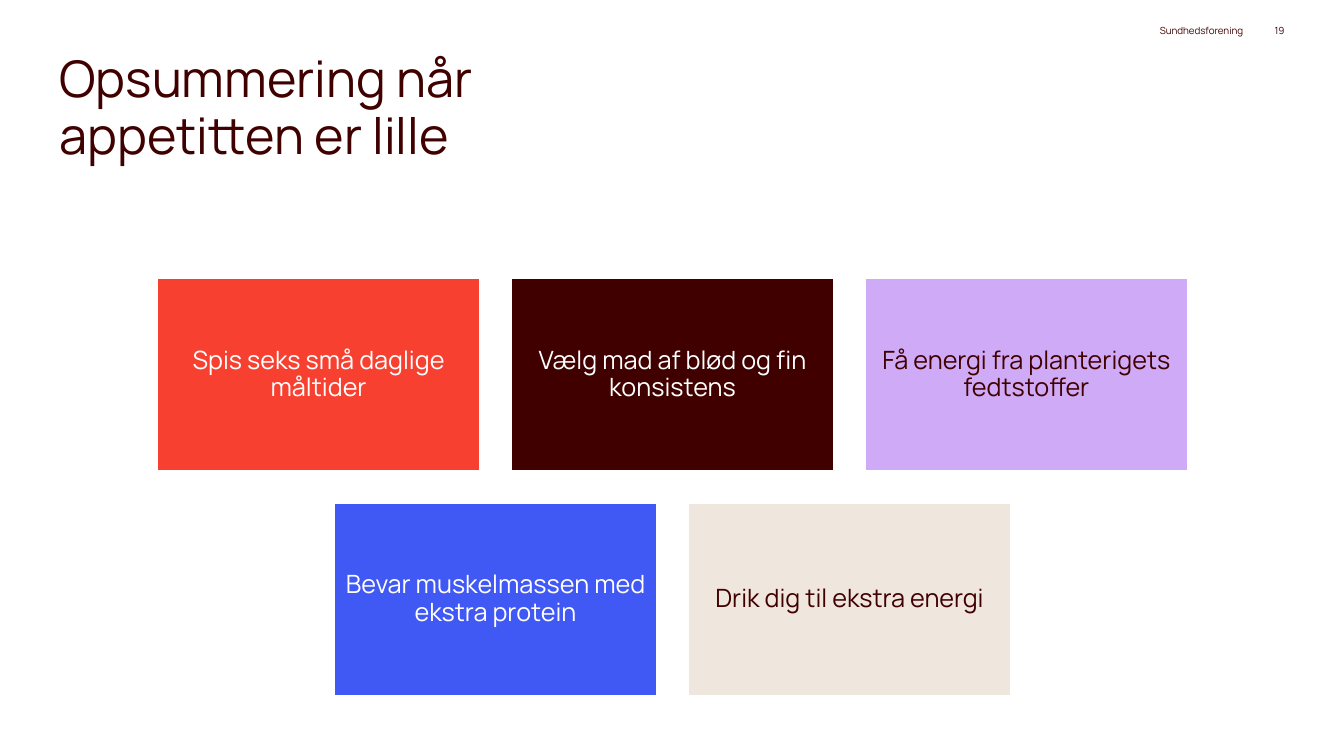
from pptx import Presentation
from pptx import util as u
from pptx.dml.color import RGBColor
from pptx.enum import shapes, text

WHITE = RGBColor(0xFF, 0xFF, 0xFF)
MAROON = RGBColor(0x40, 0x00, 0x00)
RED = RGBColor(0xF7, 0x40, 0x30)
LILAC = RGBColor(0xCF, 0xAA, 0xF6)
BLUE = RGBColor(0x40, 0x58, 0xF4)
SAND = RGBColor(0xEF, 0xE6, 0xDD)

ROWS = [
    [("Spis seks små daglige måltider", RED, WHITE),
     ("Vælg mad af blød og fin konsistens", MAROON, WHITE),
     ("Få energi fra planterigets fedtstoffer", LILAC, MAROON)],
    [("Bevar muskelmassen med ekstra protein", BLUE, WHITE),
     ("Drik dig til ekstra energi", SAND, MAROON)],
]
MID, TOP = 6.67, 2.76
CARD_W, CARD_H = 3.19, 1.91
STEP_X, STEP_Y = 3.51, 2.23


class Deck:
    font = "Manrope"

    def __init__(self, deck):
        self.slide = deck.slides.add_slide(deck.slide_layouts[5])

    def letter(self, shape, words, size, color, align, anchor, inset=0, lead=1.0):
        frame = shape.text_frame
        frame.text = words
        frame.word_wrap = True
        frame.auto_size = text.MSO_AUTO_SIZE.NONE
        frame.vertical_anchor = anchor
        frame.margin_left = frame.margin_right = u.Inches(inset)
        frame.margin_top = frame.margin_bottom = u.Inches(inset)
        para = frame.paragraphs[0]
        para.alignment = align
        para.line_spacing = lead
        para.font.name = self.font
        para.font.size = u.Pt(size)
        para.font.color.rgb = color

    def title(self, words, *area):
        shape = self.slide.shapes.title
        shape.left, shape.top, shape.width, shape.height = map(u.Inches, area)
        self.letter(shape, words, 36, MAROON, text.PP_ALIGN.LEFT,
                    text.MSO_ANCHOR.TOP, lead=0.95)

    def label(self, words, *area):
        shape = self.slide.shapes.add_textbox(*map(u.Inches, area))
        self.letter(shape, words, 7, MAROON, text.PP_ALIGN.RIGHT,
                    text.MSO_ANCHOR.MIDDLE)

    def card(self, words, fill, color, *area):
        shape = self.slide.shapes.add_shape(
            shapes.MSO_SHAPE.RECTANGLE, *map(u.Inches, area))
        shape.shadow.inherit = False
        shape.fill.solid()
        shape.fill.fore_color.rgb = fill
        shape.line.color.rgb = WHITE
        shape.line.width = u.Pt(1)
        self.letter(shape, words, 18, color, text.PP_ALIGN.CENTER,
                    text.MSO_ANCHOR.MIDDLE, inset=0.07, lead=0.9)


def main():
    prs = Presentation()
    prs.slide_width, prs.slide_height = u.Inches(13.33), u.Inches(7.5)
    deck = Deck(prs)
    deck.title("Opsummering når\vappetitten er lille", 0.59, 0.51, 5.96, 1.28)
    deck.label("Sundhedsforening", 6.77, 0.2, 5.56, 0.2)
    deck.label("19", 12.35, 0.2, 0.39, 0.2)
    for row, cards in enumerate(ROWS):
        left = MID - (CARD_W + (len(cards) - 1) * STEP_X) / 2
        for col, (words, fill, color) in enumerate(cards):
            deck.card(words, fill, color, left + col * STEP_X,
                      TOP + row * STEP_Y, CARD_W, CARD_H)
    prs.save("out.pptx")


if __name__ == "__main__":
    main()
